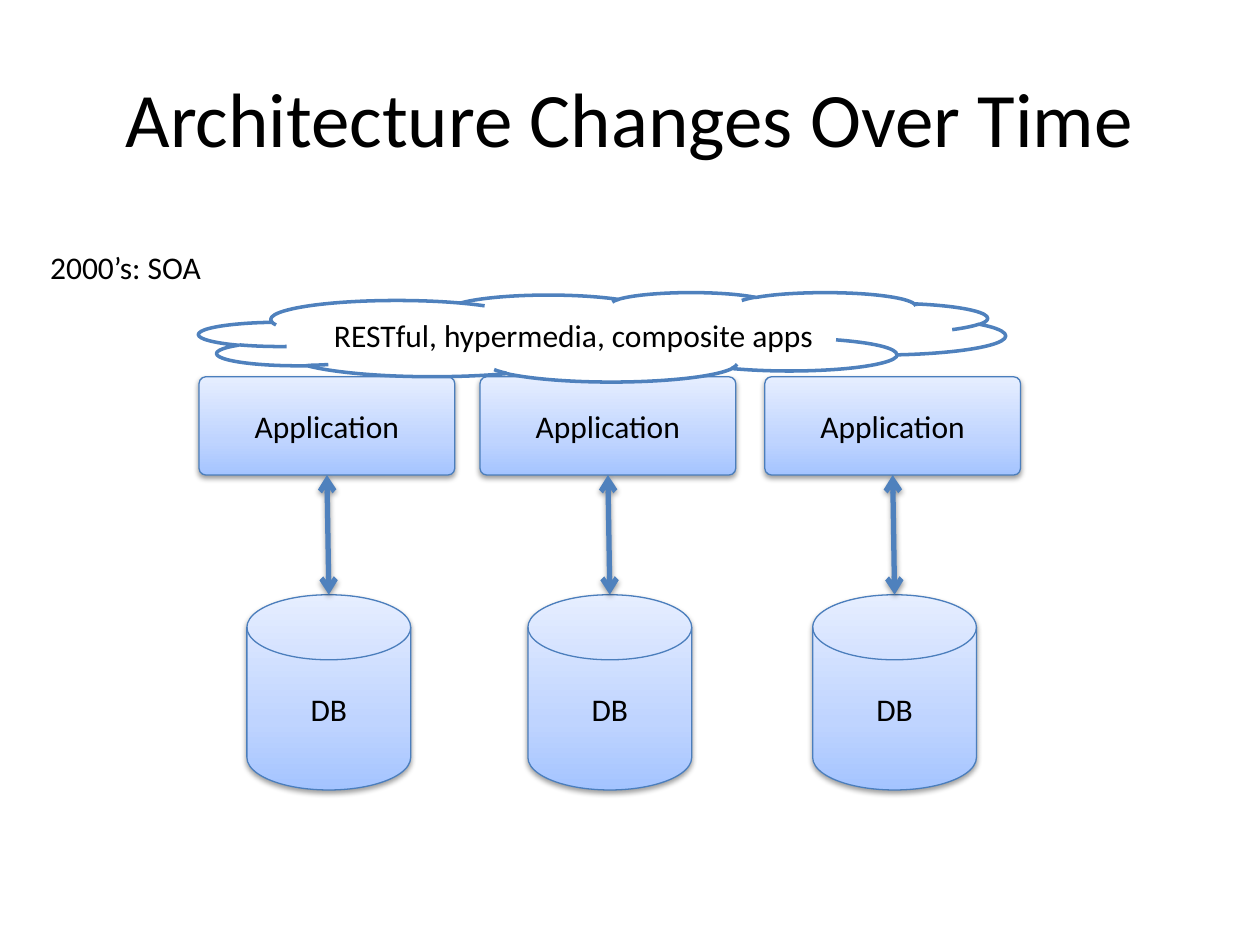
from copy import deepcopy
from dataclasses import dataclass

from lxml import etree
from pptx import Presentation
from pptx import util as u
from pptx.dml.color import RGBColor
from pptx.enum import shapes, text
from pptx.oxml import parse_xml
from pptx.oxml.ns import nsdecls, qn


@dataclass(frozen=True)
class Theme:
    font: str = "Calibri"
    title_size: int = 44
    body_size: int = 18
    ink: str = "000000"
    paper: str = "FFFFFF"
    accent: str = "4F81BD"
    outline: str = "4B7EBC"
    gradient: tuple = ((0, "A4C4FF"), (0.35, "BFD4FF"), (1, "E6EEFF"))


class Diagram:
    def __init__(self, slide, theme):
        self.slide = slide
        self.theme = theme

    def set_words(self, frame, words, size, align):
        frame.text = words
        paragraph = frame.paragraphs[0]
        paragraph.alignment = align
        font = paragraph.runs[0].font
        font.name = self.theme.font
        font.size = u.Pt(size)
        font.color.rgb = RGBColor.from_string(self.theme.ink)

    def label(self, box, words, size, align=text.PP_ALIGN.LEFT,
              anchor=text.MSO_ANCHOR.TOP, wrap=False):
        frame = self.slide.shapes.add_textbox(*map(u.Inches, box)).text_frame
        frame.word_wrap = wrap
        frame.vertical_anchor = anchor
        self.set_words(frame, words, size, align)

    def stroke(self, line, color, width):
        line.color.rgb = RGBColor.from_string(color)
        line.width = u.Pt(width)

    def shade(self, element):
        properties = element.spPr
        for effects in properties.findall(qn("a:effectLst")):
            properties.remove(effects)
        properties.append(parse_xml(
            f'<a:effectLst {nsdecls("a")}>'
            '<a:outerShdw blurRad="40000" dist="20000" dir="5400000" rotWithShape="0">'
            '<a:srgbClr val="000000"><a:alpha val="38000"/></a:srgbClr>'
            '</a:outerShdw></a:effectLst>'))

    def block(self, parent, kind, box, words):
        block = parent.shapes.add_shape(kind, *map(u.Inches, box))
        block.shadow.inherit = False
        self.stroke(block.line, self.theme.outline, 0.75)
        block.text_frame.vertical_anchor = text.MSO_ANCHOR.MIDDLE
        self.set_words(block.text_frame, words, self.theme.body_size, text.PP_ALIGN.CENTER)
        return block

    def gradient_block(self, parent, kind, box, words):
        block = self.block(parent, kind, box, words)
        block.fill.gradient()
        block.fill.gradient_angle = 90
        stop_list = block._element.spPr.find(qn("a:gradFill")).find(qn("a:gsLst"))
        stop_list.append(deepcopy(stop_list[0]))
        for stop, (position, color) in zip(block.fill.gradient_stops, self.theme.gradient):
            stop.position = position
            stop.color.rgb = RGBColor.from_string(color)
        self.shade(block._element)
        return block

    def cloud(self, box, words):
        cloud = self.block(self.slide, shapes.MSO_SHAPE.CLOUD, box, words)
        cloud.fill.solid()
        cloud.fill.fore_color.rgb = RGBColor.from_string(self.theme.paper)
        self.stroke(cloud.line, self.theme.accent, 2)

    def double_arrow(self, parent, application, database):
        arrow = parent.shapes.add_connector(
            shapes.MSO_CONNECTOR.STRAIGHT,
            application.left + application.width // 2,
            application.top + application.height,
            database.left + database.width // 2,
            database.top)
        arrow.begin_connect(application, 2)
        self.stroke(arrow.line, self.theme.accent, 3)
        line = arrow._element.spPr.find(qn("a:ln"))
        for end in ("a:headEnd", "a:tailEnd"):
            etree.SubElement(line, qn(end), type="arrow")
        self.shade(arrow._element)

    def stack(self, left):
        group = self.slide.shapes.add_group_shape()
        database = self.gradient_block(
            group, shapes.MSO_SHAPE.FLOWCHART_MAGNETIC_DISK,
            (left + 0.38, 4.72, 1.3, 1.55), "DB")
        application = self.gradient_block(
            group, shapes.MSO_SHAPE.ROUNDED_RECTANGLE,
            (left, 2.99, 2.03, 0.78), "Application")
        application.adjustments[0] = 0.07
        self.double_arrow(group, application, database)


def main():
    deck = Presentation()
    deck.slide_width, deck.slide_height = u.Inches(10), u.Inches(7.5)
    theme = Theme()
    diagram = Diagram(deck.slides.add_slide(deck.slide_layouts[6]), theme)

    diagram.label((0.5, 0.3, 9, 1.25), "Architecture Changes Over Time", theme.title_size,
                  text.PP_ALIGN.CENTER, text.MSO_ANCHOR.MIDDLE, wrap=True)
    diagram.label((0.3, 1.92, 1.43, 0.4), "2000’s: SOA", theme.body_size)
    for left in (3.81, 6.07, 1.58):
        diagram.stack(left)
    diagram.cloud((1.58, 2.32, 6.4, 0.71), "RESTful, hypermedia, composite apps")

    deck.save("out.pptx")


if __name__ == "__main__":
    main()
